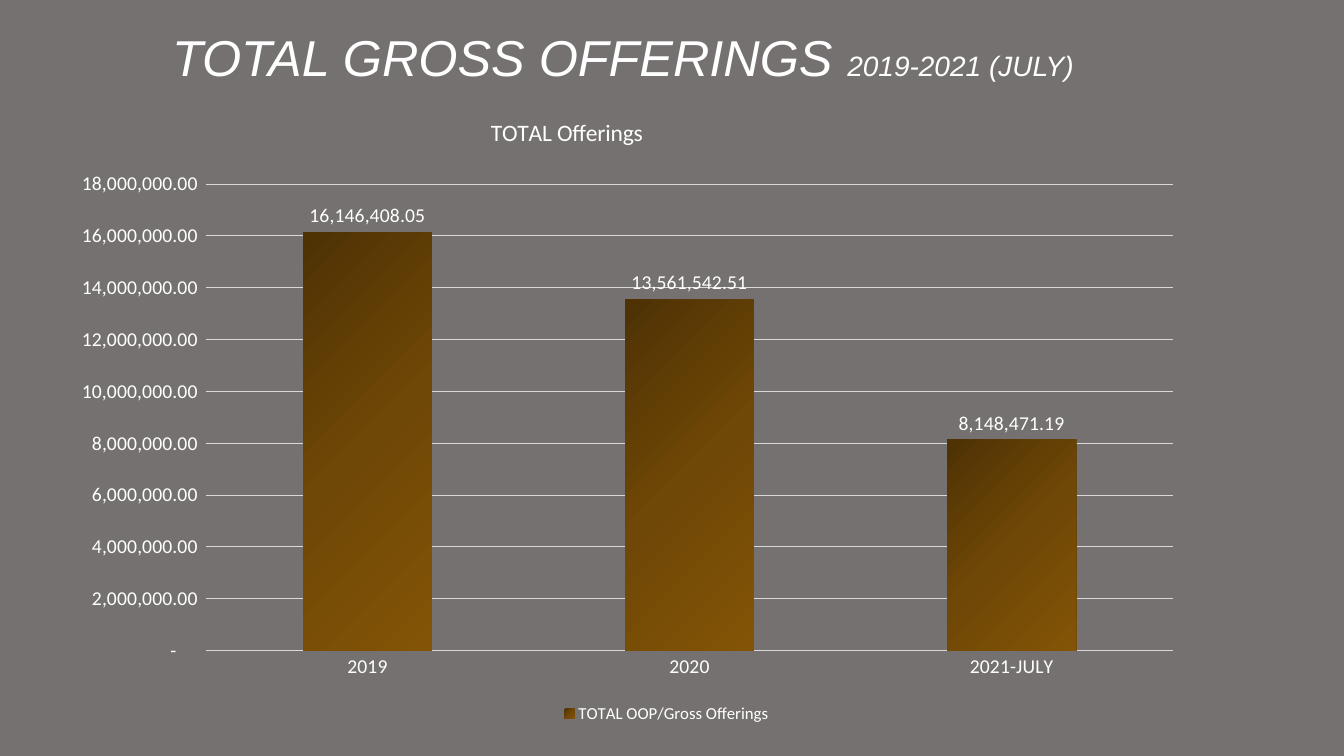
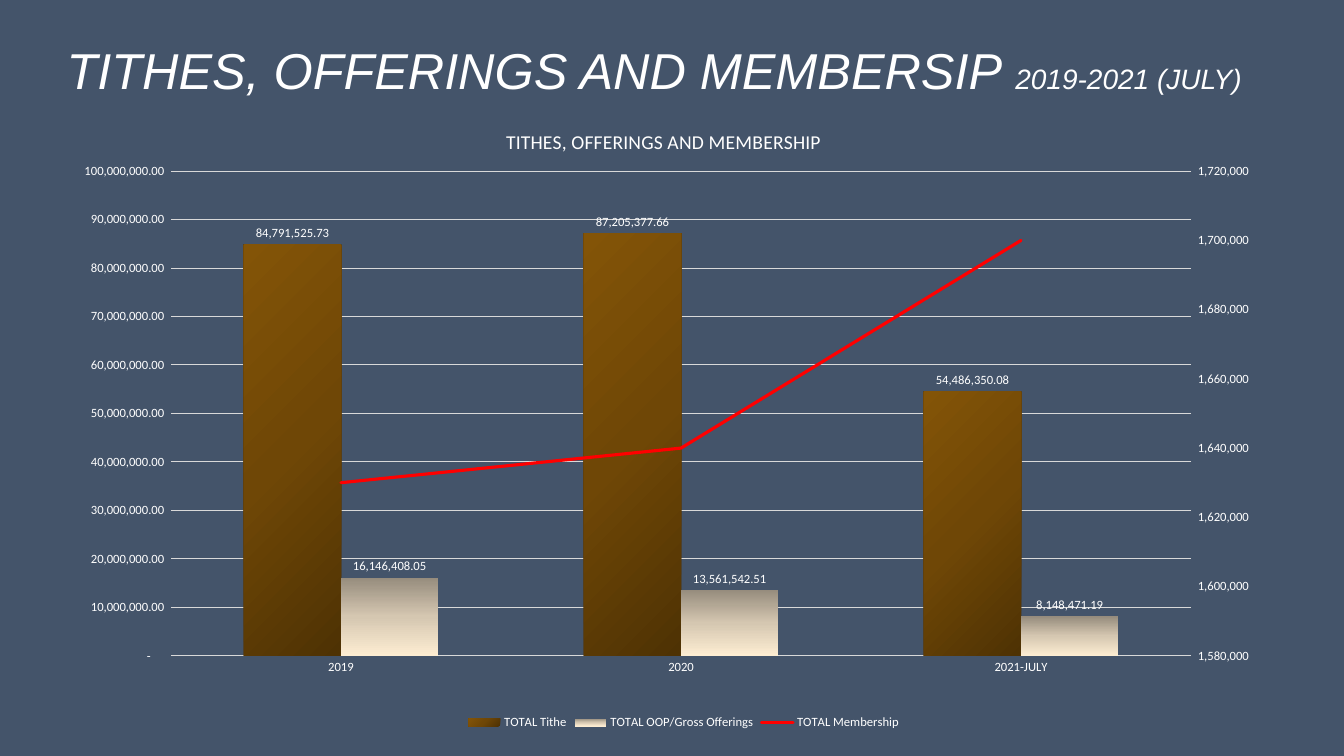
"""Build two slides of offering, tithe and membership charts."""
from copy import deepcopy

from pptx import Presentation
from pptx.chart.axis import ValueAxis
from pptx.chart.data import CategoryChartData
from pptx.dml.color import RGBColor
from pptx.enum.chart import XL_CHART_TYPE as CT, XL_LABEL_POSITION as LABEL
from pptx.enum.chart import XL_LEGEND_POSITION as LEGEND, XL_MARKER_STYLE as MARKER
from pptx.enum.chart import XL_TICK_MARK as TICK
from pptx.enum.text import MSO_ANCHOR, PP_ALIGN
from pptx.oxml import parse_xml
from pptx.oxml.ns import nsdecls, qn
from pptx.util import Inches, Pt

WHITE, GRID, RED = "FFFFFF", "D9D9D9", "FF0000"
BROWN = ("4E3204", "6F4706", "835407")
CREAM = ("968C7D", "D5C7B1", "FDEDD2")
MONEY = '_(* #,##0.00_);_(* \\(#,##0.00\\);_(* "-"??_);_(@_)'
COUNT = '_(* #,##0_);_(* \\(#,##0\\);_(* "-"??_);_(@_)'
YEARS = ("2019", "2020", "2021-JULY")
OFFERINGS = ("TOTAL OOP/Gross Offerings", (16146408.05, 13561542.51, 8148471.19))
TITHES = ("TOTAL Tithe", (84791525.73, 87205377.66, 54486350.08))
MEMBERS = ("TOTAL Membership", (1630000, 1640000, 1700000))

SLIDES = [
    dict(bg="767171", title="TOTAL GROSS OFFERINGS ", title_box=(0.43, -0.13, 11.5, 1.45),
         chart_box=(0.43, 0.92, 12.35, 6.34), heading="TOTAL Offerings",
         heading_at=(0.356, 0.03), plot_at=(0.131, 0.143, 0.776, 0.73),
         legend_at=(0.414, 0.95), sizes=(16.8, 14, 12), scale=(18e6, 2e6),
         bars=[(OFFERINGS, BROWN, 45)], line=None),
    dict(bg="44546A", title="TITHES, OFFERINGS AND MEMBERSIP ", title_box=(0.33, 0, 12.32, 1.45),
         chart_box=(0.55, 1.05, 12.46, 6.23), heading="TITHES, OFFERINGS AND MEMBERSHIP",
         heading_at=(0.356, 0.03), plot_at=(0.092, 0.104, 0.812, 0.772),
         legend_at=None, sizes=(14, 9, 9), scale=(100e6, 10e6),
         bars=[(TITHES, BROWN, 225), (OFFERINGS, CREAM, 90)], line=MEMBERS),
]


def style_font(font, size, name="Calibri", color=WHITE):
    font.size, font.name, font.bold = Pt(size), name, False
    font.color.rgb = RGBColor.from_string(color)


def place(element, *fractions, index=0):
    layout = element.find(qn("c:layout"))
    if layout is None:
        layout = parse_xml(f"<c:layout {nsdecls('c')}/>")
        element.insert(index, layout)
    target = '<c:layoutTarget val="inner"/>' if len(fractions) == 4 else ""
    modes = '<c:xMode val="edge"/><c:yMode val="edge"/>'
    sides = "".join(f'<c:{k} val="{v}"/>' for k, v in zip("xywh", fractions))
    layout.append(parse_xml(
        f"<c:manualLayout {nsdecls('c')}>{target}{modes}{sides}</c:manualLayout>"))


prs = Presentation()
prs.slide_width, prs.slide_height = Inches(13.33), Inches(7.5)

for item in SLIDES:
    s = prs.slides.add_slide(prs.slide_layouts[6])
    s.background.fill.solid()
    s.background.fill.fore_color.rgb = RGBColor.from_string(item["bg"])

    tf = s.shapes.add_textbox(*map(Inches, item["title_box"])).text_frame
    tf.word_wrap = True
    tf.vertical_anchor = MSO_ANCHOR.MIDDLE
    p = tf.paragraphs[0]
    p.alignment, p.line_spacing = PP_ALIGN.CENTER, 0.9
    for text, size in ((item["title"], 36), ("2019-2021 (JULY)", 20)):
        r = p.add_run()
        r.text = text
        style_font(r.font, size, "Arial")
        r.font.italic = True

    data = CategoryChartData(number_format=MONEY)
    data.categories = YEARS
    for (name, values), _, _ in item["bars"]:
        data.add_series(name, values)
    if item["line"]:
        data.add_series(*item["line"], number_format=COUNT)
    chart = s.shapes.add_chart(
        CT.COLUMN_CLUSTERED, *map(Inches, item["chart_box"]), data).chart
    heading_size, label_size, legend_size = item["sizes"]
    style_font(chart.font, label_size)

    chart.has_title = True
    tf = chart.chart_title.text_frame
    tf.text = item["heading"]
    style_font(tf.paragraphs[0].runs[0].font, heading_size)
    place(chart.chart_title._element, *item["heading_at"])
    chart.has_legend = True
    chart.legend.position = LEGEND.BOTTOM
    chart.legend.include_in_layout = False
    style_font(chart.legend.font, legend_size)
    if item["legend_at"]:
        place(chart.legend._element, *item["legend_at"], index=1)

    years, money = chart.category_axis, chart.value_axis
    for axis in (years, money):
        axis.major_tick_mark = axis.minor_tick_mark = TICK.NONE
        style_font(axis.tick_labels.font, label_size)
    money.has_major_gridlines = True
    for line in (years.format.line, money.major_gridlines.format.line):
        line.color.rgb = RGBColor.from_string(GRID)
        line.width = Pt(0.75)
    money.format.line.fill.background()
    money.minimum_scale = 0
    money.maximum_scale, money.major_unit = item["scale"]
    money.tick_labels.number_format = MONEY
    money.tick_labels.number_format_is_linked = False

    plot = chart.plots[0]
    plot.gap_width, plot.overlap, plot.vary_by_categories = 150, 0, False
    for series, (_, colors, angle) in zip(plot.series, item["bars"]):
        stops = "".join(f'<a:gs pos="{i * 50000}"><a:srgbClr val="{c}"/></a:gs>'
                        for i, c in enumerate(colors))
        series._element.get_or_add_spPr().insert(0, parse_xml(
            f"<a:gradFill {nsdecls('a')}><a:gsLst>{stops}</a:gsLst>"
            f'<a:lin ang="{angle * 60000}" scaled="0"/></a:gradFill>'))
        labels = series.data_labels
        labels.show_value = True
        labels.position = LABEL.OUTSIDE_END
        labels.number_format, labels.number_format_is_linked = MONEY, False
        style_font(labels.font, label_size)

    area = plot._element.getparent()
    place(area, *item["plot_at"])
    if not item["line"]:
        continue

    member_ser = plot.series[-1]._element
    for invert in member_ser.findall(qn("c:invertIfNegative")):
        member_ser.remove(invert)
    line_chart = parse_xml(
        f"<c:lineChart {nsdecls('c')}><c:grouping val=\"standard\"/>"
        '<c:varyColors val="0"/><c:marker val="1"/>'
        '<c:axId val="5001"/><c:axId val="5002"/></c:lineChart>')
    line_chart.insert(2, member_ser)
    plot._element.addnext(line_chart)

    right_el, hidden_el = deepcopy(money._element), deepcopy(years._element)
    for el, own, other in ((right_el, "5002", "5001"), (hidden_el, "5001", "5002")):
        el.find(qn("c:axId")).set("val", own)
        el.find(qn("c:crossAx")).set("val", other)
    right_el.find(qn("c:axPos")).set("val", "r")
    right_el.find(qn("c:crosses")).set("val", "max")
    hidden_el.find(qn("c:delete")).set("val", "1")
    money._element.addnext(right_el)
    right_el.addnext(hidden_el)
    right = ValueAxis(right_el)
    right.has_major_gridlines = False
    right.minimum_scale, right.maximum_scale, right.major_unit = 1580000, 1720000, 20000
    right.tick_labels.number_format = COUNT

    members = chart.plots[1].series[0]
    members.smooth = False
    members.marker.style = MARKER.NONE
    members.format.line.color.rgb = RGBColor.from_string(RED)
    members.format.line.width = Pt(2.25)
    member_ser.find(qn("c:spPr")).find(qn("a:ln")).set("cap", "rnd")

prs.save("out.pptx")
